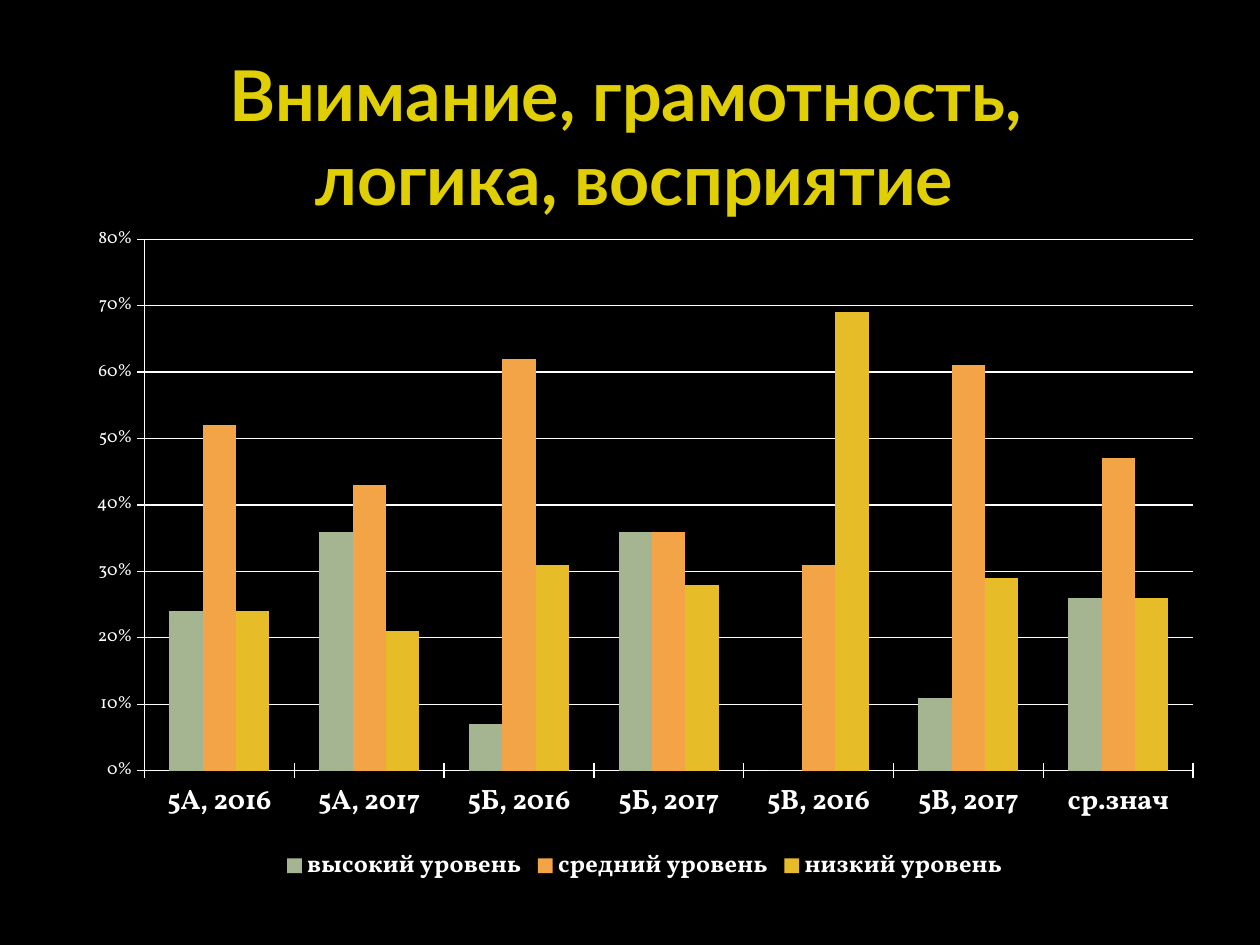
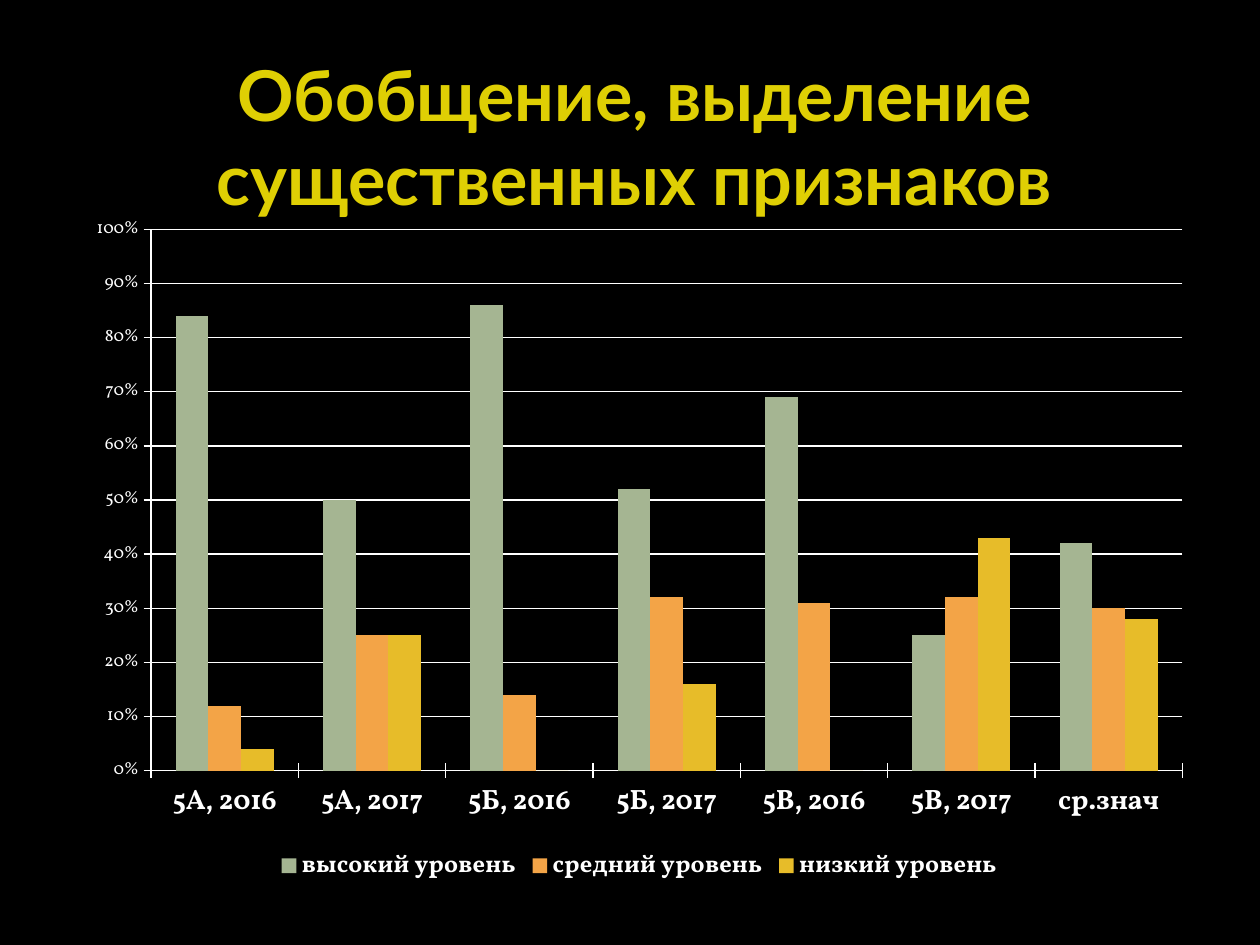
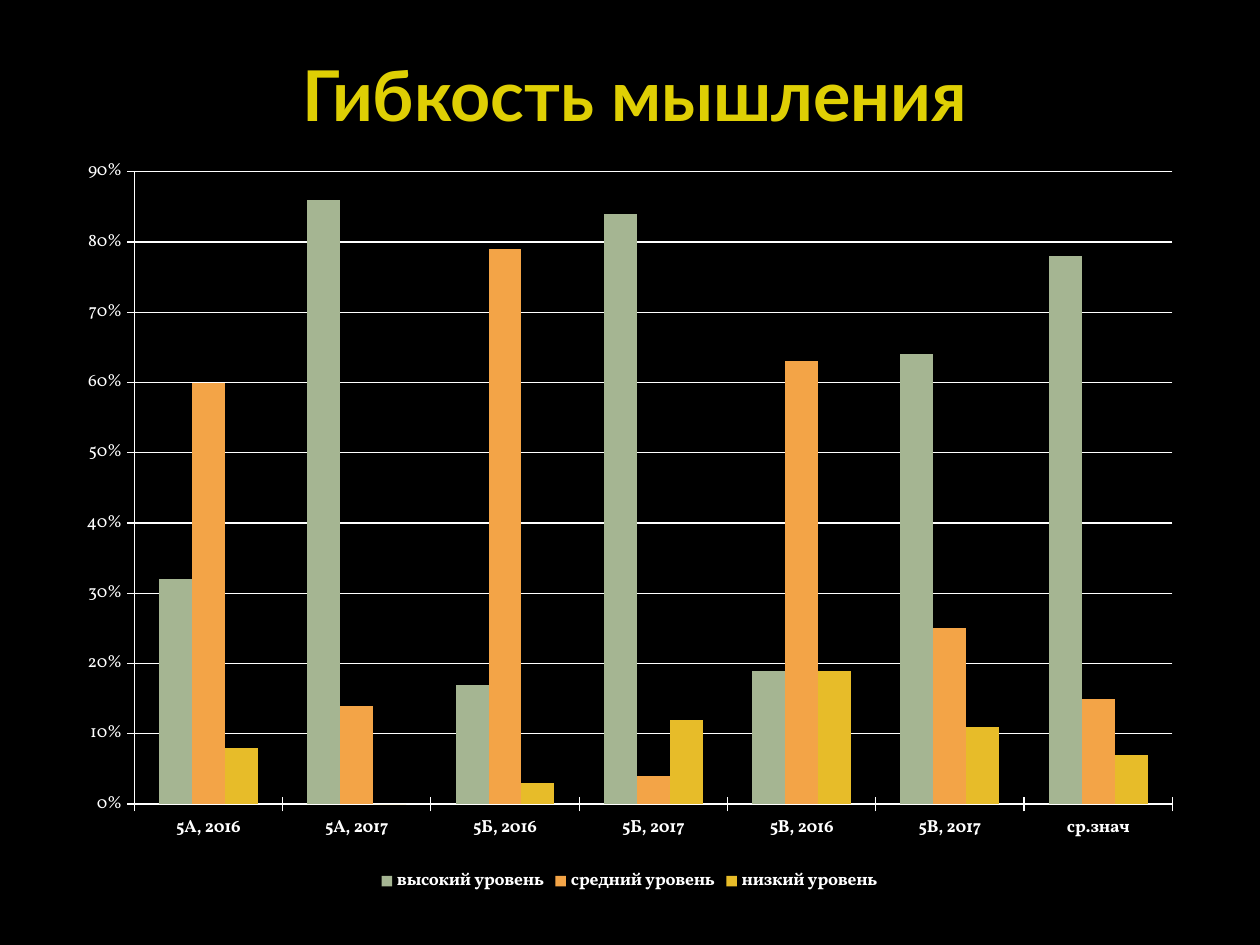
from pptx import Presentation
from pptx.chart.data import CategoryChartData
from pptx.dml.color import RGBColor
from pptx.enum.chart import XL_CHART_TYPE, XL_LEGEND_POSITION, XL_TICK_MARK
from pptx.enum.text import PP_ALIGN
from pptx.util import Emu, Pt

COLUMNS = XL_CHART_TYPE.COLUMN_CLUSTERED
BOTTOM = XL_LEGEND_POSITION.BOTTOM
CROSS = XL_TICK_MARK.CROSS
CENTER = PP_ALIGN.CENTER

BLACK = RGBColor(0x00, 0x00, 0x00)
WHITE = RGBColor(0xFF, 0xFF, 0xFF)
TITLE_YELLOW = RGBColor(0xDF, 0xCF, 0x04)
SAGE = RGBColor(0xA5, 0xB5, 0x92)
ORANGE = RGBColor(0xF3, 0xA4, 0x47)
GOLD = RGBColor(0xE7, 0xBC, 0x29)

TITLE_FONT = "Lato"
CHART_FONT = "Vollkorn"

CLASSES = ["5А, 2016", "5А, 2017", "5Б, 2016", "5Б, 2017",
           "5В, 2016", "5В, 2017", "ср.знач"]
LEVELS = [("высокий уровень", SAGE),
          ("средний уровень", ORANGE),
          ("низкий уровень", GOLD)]

# Each row of "shares" belongs to the level in the same place in LEVELS
SLIDES = [
    {"title": ["Внимание, грамотность, ", "логика, восприятие"],
     "title_box": (94, 45, 1081, 189), "title_on_top": True,
     "chart_box": (74, 214, 1142, 674),
     "axis_top": 0.8, "class_size": 16, "legend_size": 14,
     "shares": [[0.24, 0.36, 0.07, 0.36, 0, 0.11, 0.26],
                [0.52, 0.43, 0.62, 0.36, 0.31, 0.61, 0.47],
                [0.24, 0.21, 0.31, 0.28, 0.69, 0.29, 0.26]]},
    {"title": ["Обобщение, выделение существенных признаков"],
     "title_box": (94, 45, 1081, 121), "title_on_top": False,
     "chart_box": (74, 204, 1131, 684),
     "axis_top": 1.0, "class_size": 16, "legend_size": 14,
     "shares": [[0.84, 0.5, 0.86, 0.52, 0.69, 0.25, 0.42],
                [0.12, 0.25, 0.14, 0.32, 0.31, 0.32, 0.3],
                [0.04, 0.25, 0, 0.16, 0, 0.43, 0.28]]},
    {"title": ["Гибкость мышления"],
     "title_box": (94, 45, 1081, 121), "title_on_top": True,
     "chart_box": (64, 145, 1131, 753),
     "axis_top": 0.9, "class_size": 10, "legend_size": 10,
     "shares": [[0.32, 0.86, 0.17, 0.84, 0.19, 0.64, 0.78],
                [0.6, 0.14, 0.79, 0.04, 0.63, 0.25, 0.15],
                [0.08, 0, 0.03, 0.12, 0.19, 0.11, 0.07]]},
]


def px(length):
    return Emu(round(length * 914400 / 126))


def style_font(font, name, size, color, bold):
    font.name = name
    font.size = Pt(size)
    font.color.rgb = color
    font.bold = bold


def style_line(line):
    line.color.rgb = WHITE
    line.width = Pt(0.75)


def add_title(slide, box, lines):
    frame = slide.shapes.add_textbox(*map(px, box)).text_frame
    frame.word_wrap = True
    for number, line in enumerate(lines):
        paragraph = frame.add_paragraph() if number else frame.paragraphs[0]
        paragraph.alignment = CENTER
        run = paragraph.add_run()
        run.text = line
        style_font(run.font, TITLE_FONT, 40, TITLE_YELLOW, True)


def add_level_chart(slide, box, content):
    data = CategoryChartData(number_format="0%")
    data.categories = CLASSES
    for (level, _), shares in zip(LEVELS, content["shares"]):
        data.add_series(level, shares)
    chart = slide.shapes.add_chart(COLUMNS, *map(px, box), data).chart
    chart.has_title = False
    style_font(chart.font, CHART_FONT, 10, WHITE, False)

    # Columns
    plot = chart.plots[0]
    plot.vary_by_categories = False
    plot.gap_width = 150
    plot.overlap = 0
    for series, (_, color) in zip(plot.series, LEVELS):
        series.format.fill.solid()
        series.format.fill.fore_color.rgb = color

    # Axes
    class_axis, share_axis = chart.category_axis, chart.value_axis
    for axis in (class_axis, share_axis):
        axis.major_tick_mark = CROSS
        style_line(axis.format.line)
    style_font(class_axis.tick_labels.font, CHART_FONT,
               content["class_size"], WHITE, True)
    share_axis.minimum_scale = 0
    share_axis.maximum_scale = content["axis_top"]
    share_axis.major_unit = 0.1
    share_axis.tick_labels.number_format = "0%"
    share_axis.tick_labels.number_format_is_linked = False
    share_axis.has_major_gridlines = True
    style_line(share_axis.major_gridlines.format.line)

    # Legend
    chart.has_legend = True
    chart.legend.position = BOTTOM
    chart.legend.include_in_layout = False
    style_font(chart.legend.font, CHART_FONT,
               content["legend_size"], WHITE, True)


def add_level_slide(deck, content):
    slide = deck.slides.add_slide(deck.slide_layouts[6])
    slide.background.fill.solid()
    slide.background.fill.fore_color.rgb = BLACK
    if not content["title_on_top"]:
        add_title(slide, content["title_box"], content["title"])
    add_level_chart(slide, content["chart_box"], content)
    if content["title_on_top"]:
        add_title(slide, content["title_box"], content["title"])


def main():
    deck = Presentation()
    deck.slide_width, deck.slide_height = px(1260), px(945)
    for content in SLIDES:
        add_level_slide(deck, content)
    deck.save("out.pptx")


if __name__ == "__main__":
    main()
